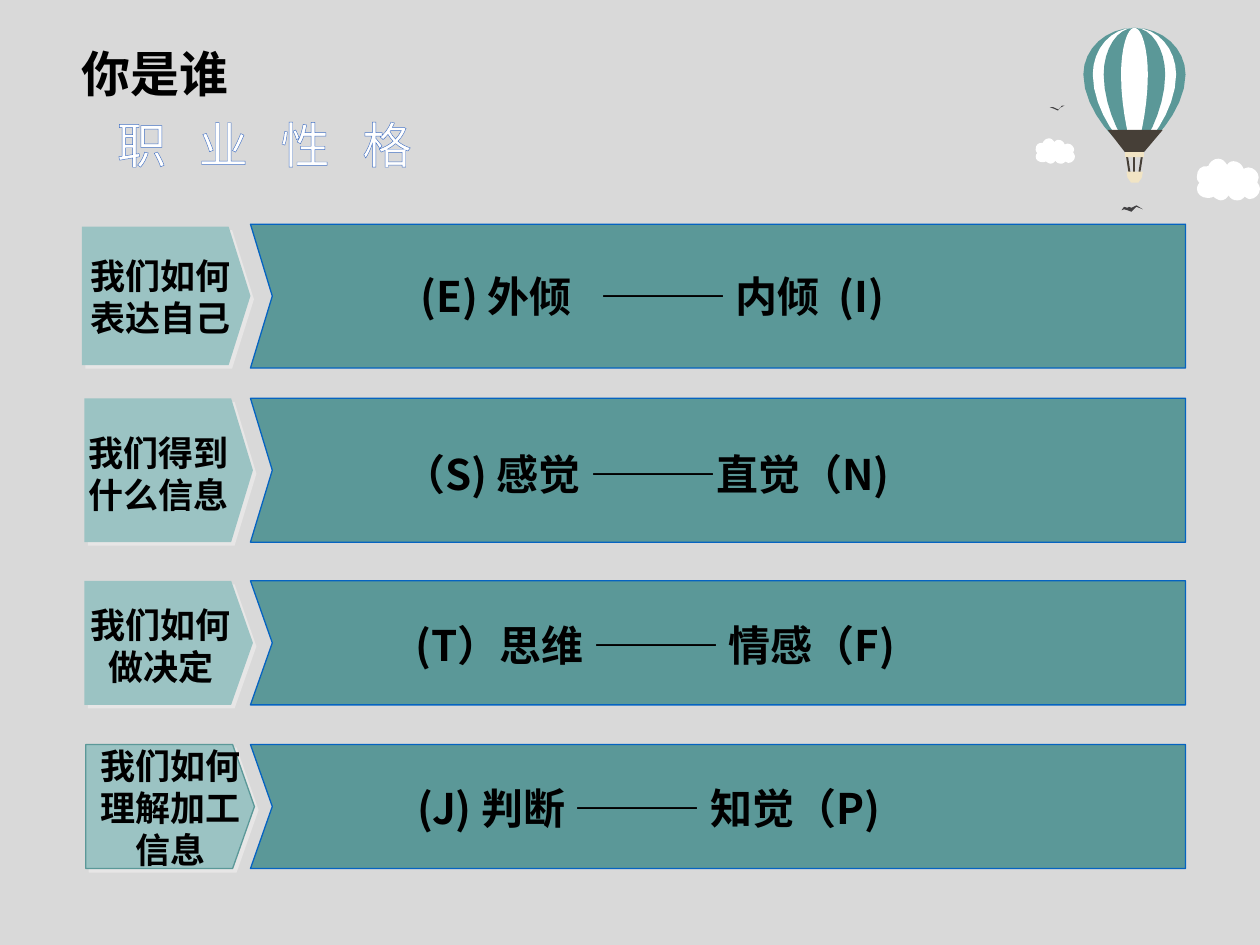
"""Build the slide on the four dimensions of professional character."""
from dataclasses import dataclass
from typing import Optional

from lxml.etree import SubElement
from pptx import Presentation
from pptx.dml.color import RGBColor
from pptx.enum.dml import MSO_PATTERN
from pptx.enum.shapes import MSO_SHAPE
from pptx.enum.text import MSO_ANCHOR, MSO_AUTO_SIZE, PP_ALIGN
from pptx.oxml import parse_xml
from pptx.oxml.ns import qn
from pptx.util import Cm, Pt

Point = tuple[float, float]
DRAWING = 'xmlns:a="http://schemas.openxmlformats.org/drawingml/2006/main"'


@dataclass(frozen=True)
class Theme:
    font: str = "Noto Sans CJK SC"
    background: str = "D9D9D9"
    teal: str = "5B9898"
    pale: str = "9BC3C3"
    border: str = "0563C1"
    shadow: str = "E7E6E6"
    white: str = "FFFFFF"
    black: str = "000000"
    brown: str = "463F37"
    cream: str = "F1E4C4"
    bird: str = "414042"
    hatch: str = "8FAADC"
    hatch_edge: str = "4472C4"
    title: float = 28
    trait: float = 24
    label: float = 20
    small: float = 14


THEME = Theme()


@dataclass(frozen=True)
class Span:
    text: str
    size: float
    bold: bool = True
    spacing: float = 0
    outline: Optional[str] = None
    outline_width: float = 0.75
    hatched: bool = False


@dataclass(frozen=True)
class Area:
    left: float
    top: float
    width: float
    height: float

    def lengths(self) -> tuple:
        return Cm(self.left), Cm(self.top), Cm(self.width), Cm(self.height)


@dataclass(frozen=True)
class Row:
    band_top: float
    band_height: float
    plate: Area
    label: str
    label_area: Area
    trait: tuple[Span, ...]
    trait_area: Area
    plate_line: Optional[str] = None
    hanging: bool = False


def trait(text: str, spacing: float = 0) -> Span:
    return Span(text, THEME.trait, spacing=spacing)


ROWS = (
    Row(4.52, 2.9, Area(1.65, 4.57, 3.4, 2.79), "我们如何表达自己", Area(1.73, 5.13, 3.02, 1.7),
        (trait("(E) 外倾"), trait(" ", 10.8), trait("——— 内倾"), trait(" ", 5.4), trait("(I)")),
        Area(8.23, 5.33, 12.47, 1.27)),
    Row(8.03, 2.9, Area(1.7, 8.03, 3.4, 2.9), "我们得到什么信息", Area(1.65, 8.69, 3.1, 1.7),
        (trait("（S) 感觉 ———直觉（N)"),), Area(8.13, 8.94, 11.68, 1.12), hanging=True),
    Row(11.71, 2.5, Area(1.7, 11.71, 3.4, 2.5), "我们如何做决定", Area(1.73, 12.17, 3.02, 1.7),
        (trait("(T）思维 ——— 情感（F)"),), Area(8.13, 12.37, 12.95, 1.27)),
    Row(15.01, 2.5, Area(1.73, 15.01, 3.4, 2.5), "我们如何理解加工信息", Area(1.73, 14.99, 3.4, 2.57),
        (Span(" ", THEME.small, False), trait("(J) 判断 ——— 知觉（P)")),
        Area(8.05, 15.65, 10.59, 1.27), plate_line=THEME.teal),
)

BAND_LEFT, BAND_RIGHT, NOTCH = 5.05, 23.9, 0.44
BALLOON_X, BALLOON_TOP, BALLOON_HEIGHT = 22.87, 0.56, 2.48
STRIPES = ((1.03, THEME.teal), (0.84, THEME.white), (0.62, THEME.teal), (0.27, THEME.white))
ENVELOPE = ((0, 0), (0.55, 0), (1, 0.17), (1, 0.38), (1, 0.68), (0.25, 1), (0, 1))
CLOUD = (
    (0.34, 0), (0.26, 0), (0.2, 0.09), (0.18, 0.18), (0.06, 0.16), (0, 0.27), (0, 0.42),
    (0, 0.48), (0, 0.52), (0.04, 0.58), (0.02, 0.61), (0, 0.67), (0, 0.73),
    (0, 0.85), (0.08, 0.94), (0.16, 0.94), (0.2, 0.94), (0.24, 0.94), (0.26, 0.91),
    (0.28, 0.94), (0.34, 1), (0.38, 1), (0.44, 1), (0.48, 0.94), (0.5, 0.88),
    (0.54, 0.97), (0.58, 1), (0.64, 1), (0.7, 1), (0.72, 0.97), (0.76, 0.91),
    (0.78, 0.94), (0.82, 0.97), (0.84, 0.97), (0.92, 0.97), (1, 0.85), (1, 0.73),
    (1, 0.67), (0.98, 0.61), (0.96, 0.58), (0.96, 0.52), (0.98, 0.48), (0.98, 0.45),
    (0.98, 0.33), (0.9, 0.21), (0.82, 0.21), (0.78, 0.21), (0.76, 0.24), (0.74, 0.24),
    (0.72, 0.15), (0.66, 0.06), (0.58, 0.06), (0.54, 0.06), (0.5, 0.09), (0.48, 0.15),
    (0.44, 0.06), (0.4, 0), (0.34, 0),
)
CLOUD_AREAS = (Area(24.13, 3.2, 1.27, 0.84), Area(20.88, 2.79, 0.79, 0.51))
BIRDS = (
    ((21.16, 2.16), (21.23, 2.16), (21.34, 2.21), (21.41, 2.13), (21.46, 2.13),
     (21.36, 2.18), (21.33, 2.23), (21.24, 2.19)),
    ((22.61, 4.24), (22.66, 4.17), (22.73, 4.19), (22.76, 4.17), (22.81, 4.19), (22.91, 4.14),
     (23.04, 4.22), (22.91, 4.17), (22.81, 4.27), (22.73, 4.24), (22.66, 4.22)),
)


def trace(points: tuple[Point, ...], steps: int = 8) -> list[Point]:
    """Return points along a chain of cubic curves."""
    traced = [points[0]]
    for first in range(0, len(points) - 1, 3):
        curve = points[first:first + 4]
        for step in range(1, steps + 1):
            t = step / steps
            weights = ((1 - t) ** 3, 3 * t * (1 - t) ** 2, 3 * t * t * (1 - t), t ** 3)
            traced.append(tuple(sum(w * p[axis] for w, p in zip(weights, curve)) for axis in (0, 1)))
    return traced


def paint(shape, fill: str, line: Optional[str] = None) -> None:
    """Give a shape its fill and line, without a shadow."""
    shape.shadow.inherit = False
    shape.fill.solid()
    shape.fill.fore_color.rgb = RGBColor.from_string(fill)
    if line:
        shape.line.color.rgb = RGBColor.from_string(line)
        shape.line.width = Pt(0.75)
    else:
        shape.line.fill.background()


def draw_outline(page, points, fill: str, line: Optional[str] = None) -> None:
    """Draw a closed outline through points in centimetres."""
    corners = [(Cm(x), Cm(y)) for x, y in points]
    builder = page.shapes.build_freeform(*corners[0])
    builder.add_line_segments(corners[1:])
    paint(builder.convert_to_shape(), fill, line)


def draw_text(page, area: Area, spans: tuple[Span, ...], inset: bool = True):
    """Draw a text box of one paragraph and return that paragraph."""
    frame = page.shapes.add_textbox(*area.lengths()).text_frame
    frame.word_wrap = True
    frame.auto_size = MSO_AUTO_SIZE.SHAPE_TO_FIT_TEXT
    if not inset:
        frame.margin_left = frame.margin_right = frame.margin_top = frame.margin_bottom = 0
        frame.vertical_anchor = MSO_ANCHOR.MIDDLE
    paragraph = frame.paragraphs[0]
    for span in spans:
        run = paragraph.add_run()
        run.text = span.text
        font = run.font
        font.size, font.bold, font.name = Pt(span.size), span.bold, THEME.font
        if span.hatched:
            font.fill.patterned()
            font.fill.pattern = MSO_PATTERN.LIGHT_DOWNWARD_DIAGONAL
            font.fill.fore_color.rgb = RGBColor.from_string(THEME.hatch)
            font.fill.back_color.rgb = RGBColor.from_string(THEME.white)
        else:
            font.color.rgb = RGBColor.from_string(THEME.black)
        properties = run._r.get_or_add_rPr()
        SubElement(properties, qn("a:ea")).set("typeface", THEME.font)
        if span.spacing:
            properties.set("spc", str(round(span.spacing * 100)))
        if span.outline:
            properties.insert(0, parse_xml(
                f'<a:ln {DRAWING} w="{Pt(span.outline_width)}"><a:solidFill>'
                f'<a:srgbClr val="{span.outline}"/></a:solidFill></a:ln>'))
    return paragraph


def draw_row(page, row: Row) -> None:
    """Draw one question plate with its band and pair of traits."""
    plate = page.shapes.add_shape(MSO_SHAPE.PENTAGON, *row.plate.lengths())
    plate.adjustments[0] = NOTCH / row.plate.height
    paint(plate, THEME.pale, row.plate_line)
    plate._element.spPr.find(qn("a:effectLst")).append(parse_xml(
        f'<a:outerShdw {DRAWING} dist="{Pt(2.8)}" dir="2700000" algn="tl" rotWithShape="0">'
        f'<a:srgbClr val="{THEME.shadow}"/></a:outerShdw>'))
    label = Span(row.label, THEME.label, outline=THEME.white)
    draw_text(page, row.label_area, (label,), inset=False).alignment = PP_ALIGN.CENTER
    top, bottom = row.band_top, row.band_top + row.band_height
    draw_outline(page, ((BAND_RIGHT, top), (BAND_LEFT, top), (BAND_LEFT + NOTCH, (top + bottom) / 2),
                        (BAND_LEFT, bottom), (BAND_RIGHT, bottom)), THEME.teal, THEME.border)
    paragraph = draw_text(page, row.trait_area, row.trait, inset=not row.hanging)
    if row.hanging:
        paragraph.line_spacing = 1.1
        properties = paragraph._p.get_or_add_pPr()
        properties.set("marL", str(Cm(0.89)))
        properties.set("indent", str(-Cm(0.89)))


def draw_sky(page) -> None:
    """Draw the clouds, the balloon and the birds."""
    for area in CLOUD_AREAS:
        draw_outline(page, [(area.left + x * area.width, area.top + y * area.height)
                            for x, y in trace(CLOUD, 4)], THEME.white)
    for shift in (-0.15, 0, 0.15):
        x = BALLOON_X + shift
        draw_outline(page, ((x - 0.02, 3.15), (x + 0.02, 3.15), (x + 0.02 - shift / 3, 3.48),
                            (x - 0.02 - shift / 3, 3.48)), THEME.brown)
    right = trace(ENVELOPE)
    loop = right + [(-x, y) for x, y in reversed(right)]
    for reach, colour in STRIPES:
        draw_outline(page, [(BALLOON_X + x * reach, BALLOON_TOP + y * BALLOON_HEIGHT)
                            for x, y in loop], colour)
    draw_outline(page, ((22.33, 2.62), (23.44, 2.62), (23.06, 3.07), (22.68, 3.07)), THEME.brown)
    draw_outline(page, ((22.71, 3.46), (23.04, 3.46), (23.02, 3.58), (22.95, 3.68),
                        (22.8, 3.68), (22.73, 3.58)), THEME.cream)
    paint(page.shapes.add_shape(MSO_SHAPE.RECTANGLE, *Area(22.68, 3.07, 0.38, 0.1).lengths()), THEME.cream)
    for bird in BIRDS:
        draw_outline(page, bird, THEME.bird)


def main() -> None:
    deck = Presentation()
    deck.slide_width, deck.slide_height = Cm(25.4), Cm(19.05)
    page = deck.slides.add_slide(deck.slide_layouts[6])
    page.background.fill.solid()
    page.background.fill.fore_color.rgb = RGBColor.from_string(THEME.background)
    draw_sky(page)
    for row in ROWS:
        draw_row(page, row)
    subtitle = Span("职 业 性 格", THEME.title, False, 6.3, THEME.hatch_edge, 1, True)
    draw_text(page, Area(2.11, 2.18, 8.48, 1.45), (subtitle,))
    draw_text(page, Area(1.4, 0.86, 4.09, 1.37), (Span("你是谁", THEME.title),)).line_spacing = 0.93
    deck.save("out.pptx")


if __name__ == "__main__":
    main()
